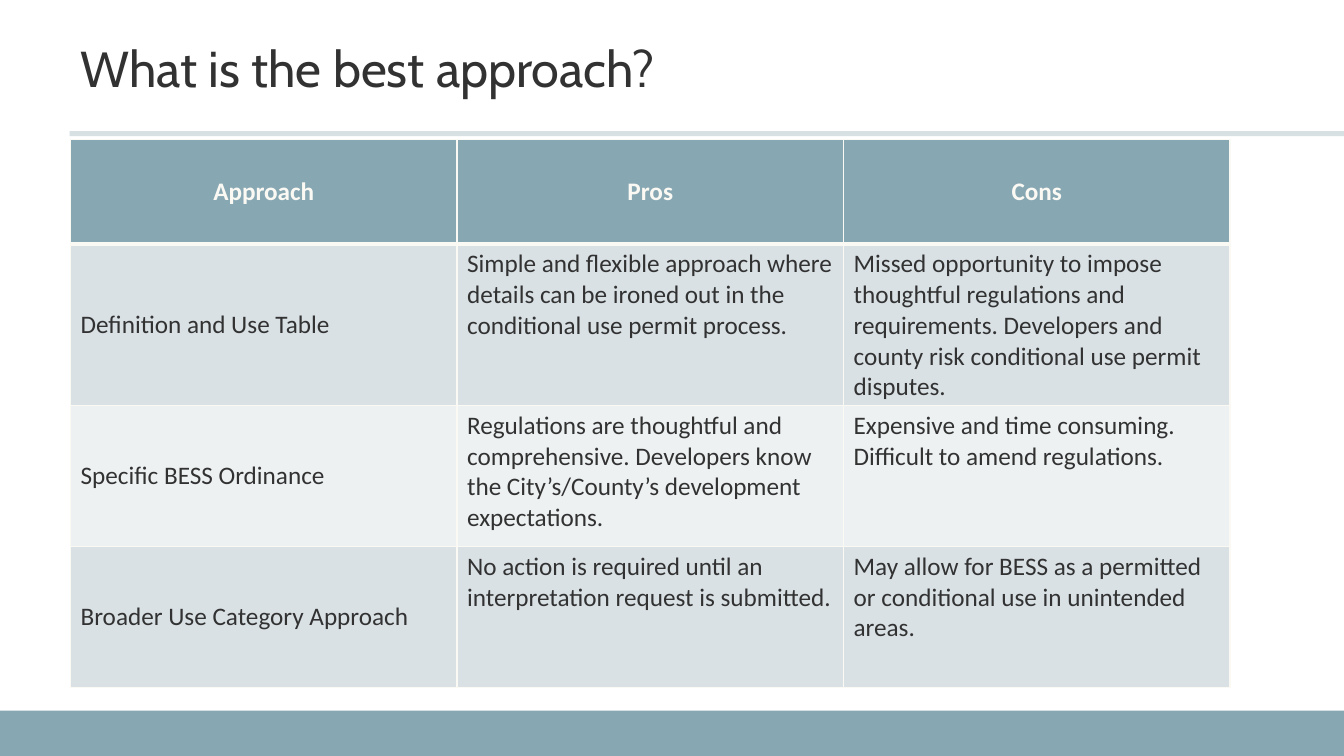
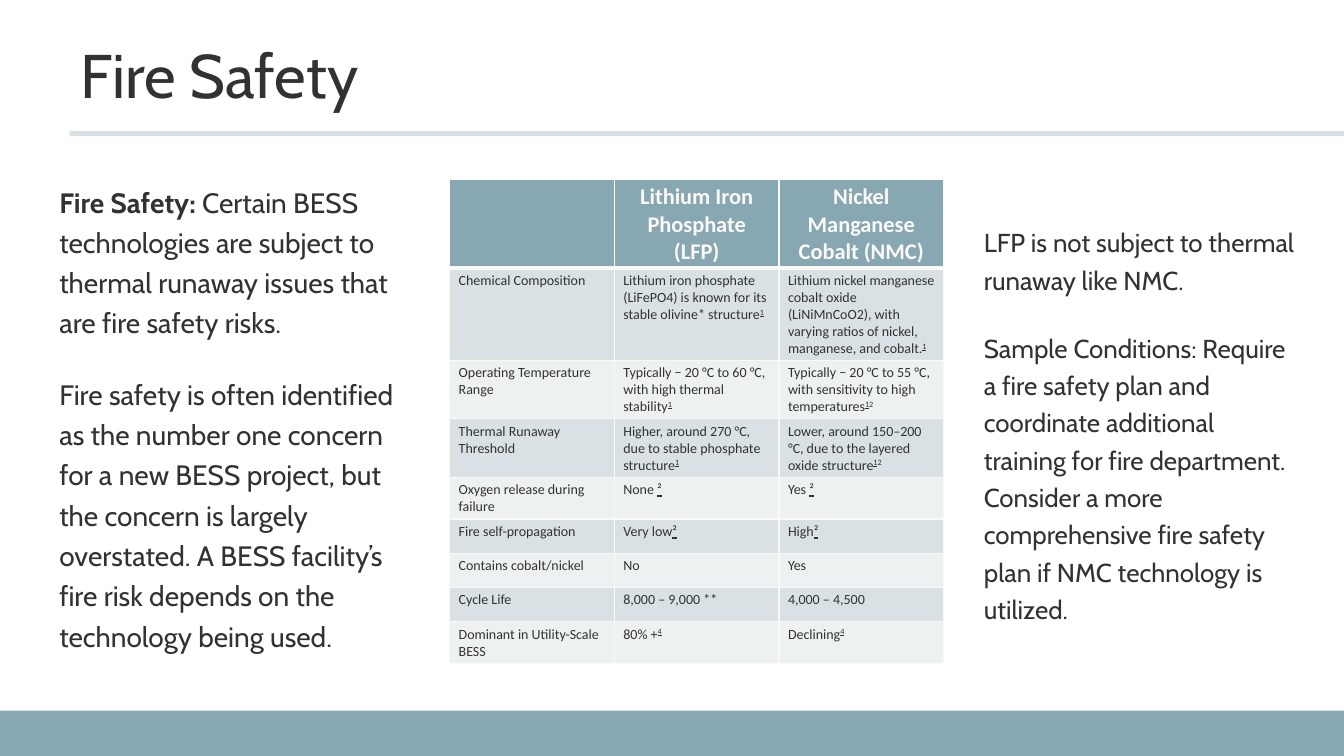
from lxml import etree
from pptx import Presentation
from pptx.dml.color import RGBColor
from pptx.enum.shapes import MSO_SHAPE
from pptx.enum.text import MSO_ANCHOR as ANCHOR, PP_ALIGN as ALIGN
from pptx.oxml.ns import qn
from pptx.util import Inches, Pt

# Shared look
rgb = RGBColor.from_string
INK, CREAM = "323232", "FBF9F3"
TEAL, RULE = "87A7B3", "CDDADE"
BANDS = ["D9E1E5", "EDF1F2"]
HEAD_FONT, TABLE_FONT = "Cabin", "Calibri"


def add_runs(p, content, size, font, color=INK, bold=False):
    """Content is a string or a list of (text, marks): b bold, u underline, ^ superscript."""
    pieces = [(content, "")] if isinstance(content, str) else content
    for text, marks in pieces:
        r = p.add_run()
        r.text = text
        f = r.font
        f.size, f.name, f.color.rgb = Pt(size), font, rgb(color)
        f.bold = bold or "b" in marks
        if "u" in marks:
            f.underline = True
        if "^" in marks:
            r._r.get_or_add_rPr().set("baseline", "30000")


def add_grid(s, left, top, width, heights, rows, head_size, size, margins, middle):
    cols = len(rows[0])
    tbl = s.shapes.add_table(len(rows), cols, Inches(left), Inches(top),
                             Inches(width), Inches(sum(heights))).table
    tbl.horz_banding = False
    for col in tbl.columns:
        col.width = Inches(width / cols)
    for i, row in enumerate(rows):
        tbl.rows[i].height = Inches(heights[i])
        for j, content in enumerate(row):
            cell = tbl.cell(i, j)
            head = i == 0
            cell.margin_left = cell.margin_right = Inches(margins[0])
            cell.margin_top = cell.margin_bottom = Inches(margins[1])
            if middle and (head or j == 0):
                cell.vertical_anchor = ANCHOR.MIDDLE
            # Borders come before the fill; the line under the header is thick
            for side in "LRTB":
                thick = (i, side) in ((0, "B"), (1, "T"))
                ln = etree.SubElement(cell._tc.get_or_add_tcPr(), qn("a:ln" + side),
                                      w=str(Pt(3 if thick else 1)))
                paint = etree.SubElement(ln, qn("a:solidFill"))
                etree.SubElement(paint, qn("a:srgbClr"), val=CREAM)
            cell.fill.solid()
            cell.fill.fore_color.rgb = rgb(TEAL if head else BANDS[(i - 1) % 2])
            p = cell.text_frame.paragraphs[0]
            if head:
                p.alignment = ALIGN.CENTER
            if content:
                add_runs(p, content, head_size if head else size, TABLE_FONT,
                         CREAM if head else INK, bold=head)


prs = Presentation()
prs.slide_width, prs.slide_height = Inches(13.33), Inches(7.5)

# Footer band, title rule and title on every slide
slides = []
for title, top, size in [("What is the best approach?", 0.2, 36), ("Fire Safety", 0.27, 44)]:
    s = prs.slides.add_slide(prs.slide_layouts[6])
    slides.append(s)
    for x, y, w, h, color, alpha in [(0, 7.05, 13.33, 0.45, TEAL, 100),
                                     (0.69, 1.3, 12.64, 0.05, RULE, 80)]:
        sp = s.shapes.add_shape(MSO_SHAPE.RECTANGLE, Inches(x), Inches(y), Inches(w), Inches(h))
        sp.shadow.inherit = False
        sp.line.fill.background()
        sp.fill.solid()
        sp.fill.fore_color.rgb = rgb(color)
        if alpha < 100:
            clr = sp._element.spPr.find(".//" + qn("a:srgbClr"))
            etree.SubElement(clr, qn("a:alpha"), val=str(alpha * 1000))
    tf = s.shapes.add_textbox(Inches(0.7), Inches(top), Inches(11.19), Inches(1.02)).text_frame
    tf.word_wrap = True
    tf.vertical_anchor = ANCHOR.MIDDLE
    p = tf.paragraphs[0]
    p.line_spacing = 0.9
    add_runs(p, title, size, HEAD_FONT)

approach, safety = slides

# Slide 1: approaches compared
add_grid(approach, 0.7, 1.38, 11.5, [1.04, 1.4, 1.4, 1.4], [
    ["Approach", "Pros", "Cons"],
    ["Definition and Use Table",
     "Simple and flexible approach where details can be ironed out in the conditional use "
     "permit process.",
     "Missed opportunity to impose thoughtful regulations and requirements. Developers and "
     "county risk conditional use permit disputes."],
    ["Specific BESS Ordinance",
     "Regulations are thoughtful and comprehensive. Developers know the City’s/County’s "
     "development expectations.",
     "Expensive and time consuming. Difficult to amend regulations."],
    ["Broader Use Category Approach",
     "No action is required until an interpretation request is submitted.",
     "May allow for BESS as a permitted or conditional use in unintended areas."],
], head_size=18, size=18, margins=(0.1, 0.05), middle=True)

# Slide 2: text on both sides of the table
for x, y, w, h, size, paragraphs in [
    (0.49, 1.72, 3.67, 4.84, 20, [
        [("Fire Safety: ", "b"),
         ("Certain BESS technologies are subject to thermal runaway issues that are fire "
          "safety risks.", "")],
        "Fire safety is often identified as the number one concern for a new BESS project, "
        "but the concern is largely overstated. A BESS facility’s fire risk depends on the "
        "technology being used."]),
    (9.66, 2.14, 3.33, 4.32, 18.5, [
        "LFP is not subject to thermal runaway like NMC.",
        "Sample Conditions: Require a fire safety plan and coordinate additional training for "
        "fire department. Consider a more comprehensive fire safety plan if NMC technology is "
        "utilized."]),
]:
    tf = safety.shapes.add_textbox(Inches(x), Inches(y), Inches(w), Inches(h)).text_frame
    tf.word_wrap = True
    for i, content in enumerate(paragraphs):
        p = tf.add_paragraph() if i else tf.paragraphs[0]
        p.line_spacing = 1.2
        if i:
            p.space_before = Pt(22)
        add_runs(p, content, size, HEAD_FONT)

# Slide 2: battery chemistries compared
REF1, REF2, REF4 = ("1", "u^"), ("2", "^"), ("4", "u^")
SQUARE = ("²", "u")
add_grid(safety, 4.46, 1.78, 4.9, [0.88, 0.9, 0.57, 0.57, 0.41, 0.34, 0.34, 0.34, 0.41], [
    ["", "Lithium Iron Phosphate (LFP)", "Nickel Manganese Cobalt (NMC)"],
    ["Chemical Composition",
     [("Lithium iron phosphate (LiFePO4) is known for its stable olivine* structure", ""), REF1],
     [("Lithium nickel manganese cobalt oxide (LiNiMnCoO2), with varying ratios of nickel, "
       "manganese, and cobalt.", ""), REF1]],
    ["Operating Temperature Range",
     [("Typically − 20 °C to 60 °C, with high thermal stability", ""), REF1],
     [("Typically − 20 °C to 55 °C, with sensitivity to high temperatures", ""), REF1, REF2]],
    ["Thermal Runaway Threshold",
     [("Higher, around 270 °C, due to stable phosphate structure", ""), REF1],
     [("Lower, around 150–200 °C, due to the layered oxide structure", ""), REF1, REF2]],
    ["Oxygen release during failure", [("None ", ""), SQUARE], [("Yes ", ""), SQUARE]],
    ["Fire self-propagation", [("Very low", ""), SQUARE], [("High", ""), SQUARE]],
    ["Contains cobalt/nickel", "No", "Yes"],
    ["Cycle Life", "8,000 – 9,000 **", "4,000 – 4,500"],
    ["Dominant in Utility-Scale BESS", [("80% +", ""), REF4], [("Declining", ""), REF4]],
], head_size=16, size=10, margins=(0.09, 0.04), middle=False)

prs.save("out.pptx")
